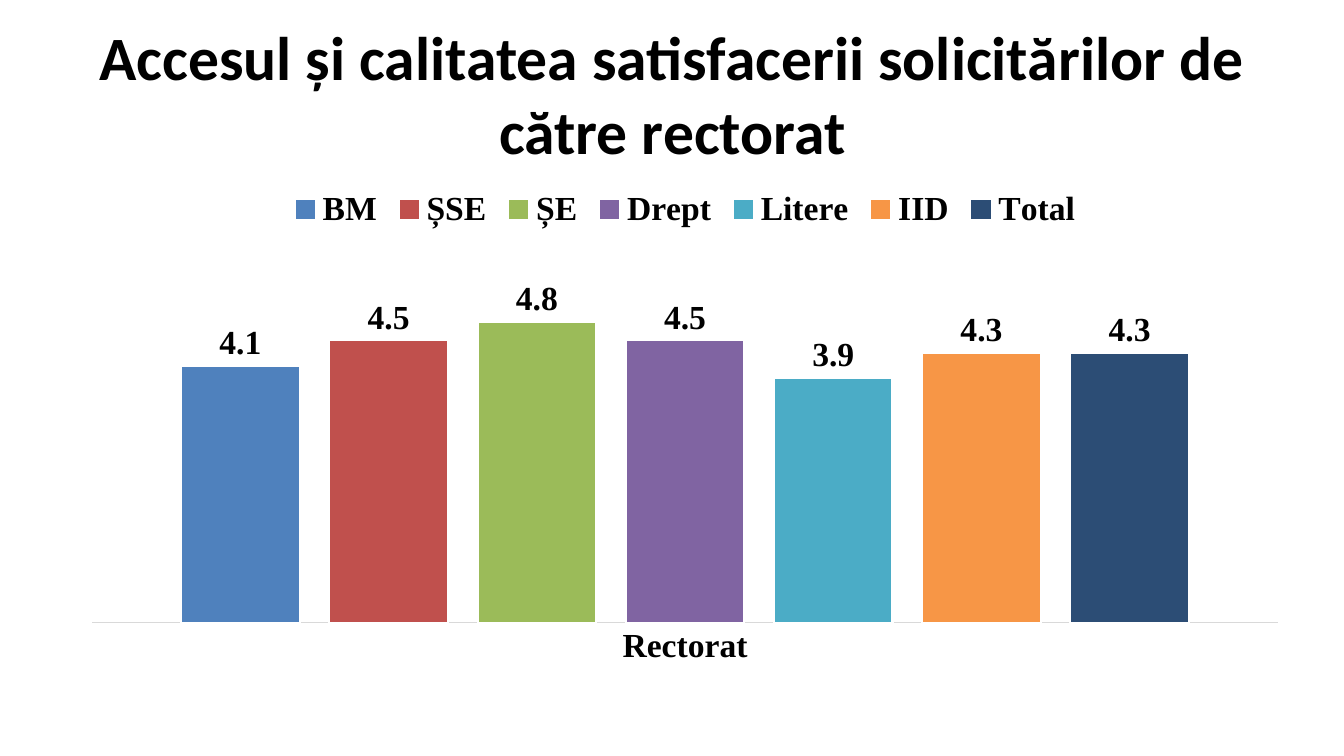
from lxml import etree
from pptx import Presentation
from pptx.chart import data
from pptx.dml import color
from pptx.enum import chart as ch, text
from pptx.oxml import ns
from pptx.util import Inches, Pt

TITLE = "Accesul și calitatea satisfacerii solicitărilor de către rectorat"
SCORES = [
    ("BM", 4.1, "4F81BD"),
    ("ȘSE", 4.5, "C0504D"),
    ("ȘE", 4.8, "9BBB59"),
    ("Drept", 4.5, "8064A2"),
    ("Litere", 3.9, "4BACC6"),
    ("IID", 4.3, "F79646"),
    ("Total", 4.3, "2C4D75"),
]


def rgb(value):
    return color.RGBColor.from_string(value)


def set_font(font, name, size):
    font.name = name
    font.size = Pt(size)
    font.bold = True
    font.color.rgb = rgb("000000")


def set_line(line, value, width):
    line.color.rgb = rgb(value)
    line.width = Pt(width)


def add_title(s, words):
    sp = s.shapes.add_textbox(Inches(0.67), Inches(0.3), Inches(12), Inches(1.25))
    tf = sp.text_frame
    tf.word_wrap = True
    tf.vertical_anchor = text.MSO_ANCHOR.MIDDLE
    p = tf.paragraphs[0]
    p.alignment = text.PP_ALIGN.CENTER
    r = p.add_run()
    r.text = words
    set_font(r.font, "Calibri", 44)


def place_plot(chart, x, y, w, h):
    plot_area = chart._chartSpace.chart.plotArea
    for old in plot_area.findall(ns.qn("c:layout")):
        plot_area.remove(old)
    layout = etree.Element(ns.qn("c:layout"))
    manual = etree.SubElement(layout, ns.qn("c:manualLayout"))
    settings = [("layoutTarget", "inner"), ("xMode", "edge"), ("yMode", "edge"),
                ("x", x), ("y", y), ("w", w), ("h", h)]
    for tag, value in settings:
        etree.SubElement(manual, ns.qn(f"c:{tag}")).set("val", str(value))
    plot_area.insert(0, layout)


def style_series(series, fill):
    series.format.fill.solid()
    series.format.fill.fore_color.rgb = rgb(fill)
    set_line(series.format.line, "FFFFFF", 1.5)
    labels = series.data_labels
    labels.show_value = True
    labels.number_format = "0.0"
    labels.number_format_is_linked = False
    labels.position = ch.XL_LABEL_POSITION.OUTSIDE_END
    set_font(labels.font, "Times New Roman", 24)


def style_axes(chart):
    value_axis = chart.value_axis
    value_axis.minimum_scale = 0
    value_axis.maximum_scale = 6
    value_axis.has_major_gridlines = False
    value_axis.visible = False
    cat_axis = chart.category_axis
    cat_axis.major_tick_mark = ch.XL_TICK_MARK.NONE
    set_line(cat_axis.format.line, "D9D9D9", 0.75)
    set_font(cat_axis.tick_labels.font, "Times New Roman", 24)


def add_score_chart(s, category, scores):
    cd = data.CategoryChartData(number_format="0.0")
    cd.categories = [category]
    for name, score, _ in scores:
        cd.add_series(name, [score])
    chart = s.shapes.add_chart(
        ch.XL_CHART_TYPE.COLUMN_CLUSTERED,
        Inches(0.67), Inches(1.75), Inches(12.25), Inches(4.95), cd).chart
    set_font(chart.font, "Times New Roman", 24)
    chart.has_title = False
    chart.has_legend = True
    chart.legend.position = ch.XL_LEGEND_POSITION.TOP
    chart.legend.include_in_layout = False
    set_font(chart.legend.font, "Times New Roman", 24)
    plot = chart.plots[0]
    plot.vary_by_categories = False
    plot.gap_width = 150
    plot.overlap = -25
    for series, (_, _, fill) in zip(plot.series, scores):
        style_series(series, fill)
    style_axes(chart)
    place_plot(chart, 0.02, 0.14, 0.96, 0.755)


def main():
    prs = Presentation()
    prs.slide_width = Inches(13.33)
    prs.slide_height = Inches(7.5)
    s = prs.slides.add_slide(prs.slide_layouts[6])
    add_title(s, TITLE)
    add_score_chart(s, "Rectorat", SCORES)
    prs.save("out.pptx")


if __name__ == "__main__":
    main()
